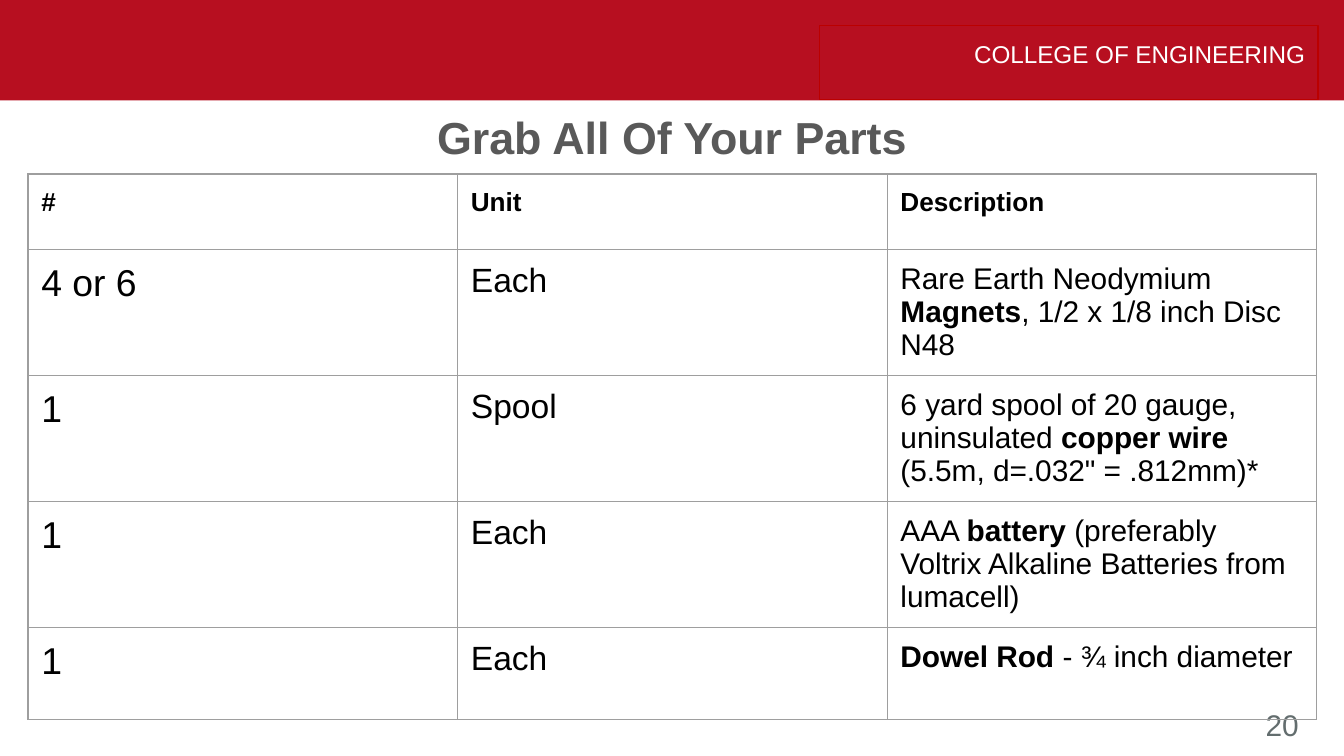
from lxml import etree
from pptx import Presentation
from pptx.dml.color import RGBColor
from pptx.enum.shapes import MSO_SHAPE
from pptx.enum.text import MSO_ANCHOR, PP_ALIGN
from pptx.oxml.ns import qn
from pptx.util import Cm, Pt

RECTANGLE = MSO_SHAPE.RECTANGLE
TOP = MSO_ANCHOR.TOP
LEFT, CENTER, RIGHT = PP_ALIGN.LEFT, PP_ALIGN.CENTER, PP_ALIGN.RIGHT

RED = RGBColor(0xB7, 0x0F, 0x20)
DARK_RED = RGBColor(0xBB, 0x00, 0x00)
WHITE = RGBColor(0xFF, 0xFF, 0xFF)
BLACK = RGBColor(0x00, 0x00, 0x00)
TITLE_GRAY = RGBColor(0x59, 0x59, 0x59)
NUMBER_GRAY = RGBColor(0x63, 0x6D, 0x6E)
BORDER_GRAY = RGBColor(0x9E, 0x9E, 0x9E)
FONT = "Arial"

# Content: each cell is a list of (text, bold) runs
HEADINGS = ["#", "Unit", "Description"]
PARTS = [
    ("4 or 6", "Each", [("Rare Earth Neodymium ", False), ("Magnets", True),
                        (", 1/2 x 1/8 inch Disc N48", False)]),
    ("1", "Spool", [("6 yard spool of 20 gauge, uninsulated ", False), ("copper wire", True),
                    (" (5.5m, d=.032\" = .812mm)*", False)]),
    ("1", "Each", [("AAA ", False), ("battery", True),
                   (" (preferably Voltrix Alkaline Batteries from lumacell)", False)]),
    ("1", "Each", [("Dowel Rod", True), (" - ¾ inch diameter", False)]),
]
HEADING_SIZE = 14
COLUMN_SIZES = [20, 18, 16]
COLUMN_WIDTH = 8.12
ROW_HEIGHTS = [1.42, 2.38, 2.38, 2.38, 1.75]
INSET = 0.25


def write_runs(paragraph, runs, size, color):
    for text, bold in runs:
        run = paragraph.add_run()
        run.text = text
        run.font.name, run.font.size = FONT, Pt(size)
        run.font.bold = bold
        run.font.color.rgb = color


def add_box(slide, box, fill=None, line=None):
    shape = slide.shapes.add_shape(RECTANGLE, *(Cm(value) for value in box))
    shape.shadow.inherit = False
    if fill is None:
        shape.fill.background()
    else:
        shape.fill.solid()
        shape.fill.fore_color.rgb = fill
    if line is None:
        shape.line.fill.background()
    else:
        shape.line.color.rgb = line
        shape.line.width = Pt(0.75)
    return shape


def add_label(slide, box, text, size, color, align, bold=False, spacing=1.0, line=None):
    frame = add_box(slide, box, line=line).text_frame
    frame.word_wrap = True
    frame.vertical_anchor = TOP
    paragraph = frame.paragraphs[0]
    paragraph.alignment = align
    paragraph.line_spacing = spacing
    write_runs(paragraph, [(text, bold)], size, color)


def add_borders(cell):
    properties = cell._tc.get_or_add_tcPr()
    for index, side in enumerate(("a:lnL", "a:lnR", "a:lnT", "a:lnB")):
        border = etree.Element(qn(side), w=str(Pt(0.75)))
        fill = etree.SubElement(border, qn("a:solidFill"))
        etree.SubElement(fill, qn("a:srgbClr"), val=str(BORDER_GRAY))
        properties.insert(index, border)


def fill_cell(cell, runs, size):
    cell.margin_left = cell.margin_right = Cm(INSET)
    cell.margin_top = cell.margin_bottom = Cm(INSET)
    cell.fill.background()
    add_borders(cell)
    write_runs(cell.text_frame.paragraphs[0], runs, size, BLACK)


def add_parts_table(slide):
    rows = [[[(heading, True)] for heading in HEADINGS]]
    rows += [[[(count, False)], [(unit, False)], description]
             for count, unit, description in PARTS]
    table = slide.shapes.add_table(
        len(rows), len(HEADINGS), Cm(0.53), Cm(3.29),
        Cm(COLUMN_WIDTH * len(HEADINGS)), Cm(sum(ROW_HEIGHTS))).table
    table.first_row = table.horz_banding = False
    for column in table.columns:
        column.width = Cm(COLUMN_WIDTH)
    for row_index, (row, height) in enumerate(zip(rows, ROW_HEIGHTS)):
        table.rows[row_index].height = Cm(height)
        sizes = COLUMN_SIZES if row_index else [HEADING_SIZE] * len(HEADINGS)
        for column_index, (runs, size) in enumerate(zip(row, sizes)):
            fill_cell(table.cell(row_index, column_index), runs, size)


def main():
    presentation = Presentation()
    presentation.slide_width, presentation.slide_height = Cm(25.4), Cm(14.29)
    slide = presentation.slides.add_slide(presentation.slide_layouts[6])

    # Banner and page number
    add_box(slide, (0, 0, 25.4, 1.9), fill=RED)
    add_label(slide, (23.67, 13.23, 1.22, 0.71), "20", 16, NUMBER_GRAY, LEFT)

    # Banner label and title
    add_label(slide, (15.49, 0.48, 9.42, 1.4), "COLLEGE OF ENGINEERING", 13, WHITE, RIGHT,
              spacing=1.26, line=DARK_RED)
    add_label(slide, (4.93, 2.18, 15.54, 1.32), "Grab All Of Your Parts", 24, TITLE_GRAY, CENTER,
              bold=True, spacing=0.75, line=WHITE)

    add_parts_table(slide)
    presentation.save("out.pptx")


if __name__ == "__main__":
    main()
